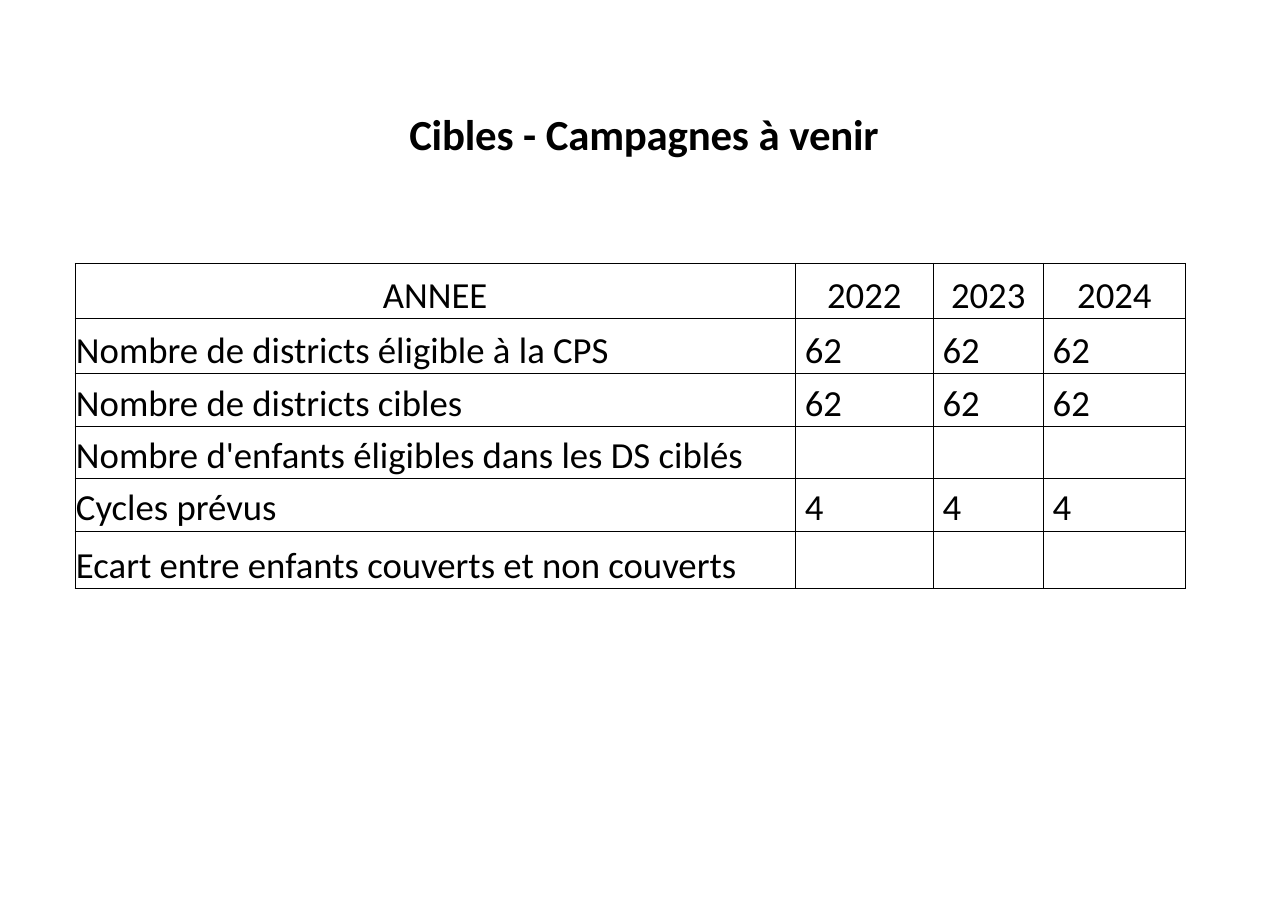
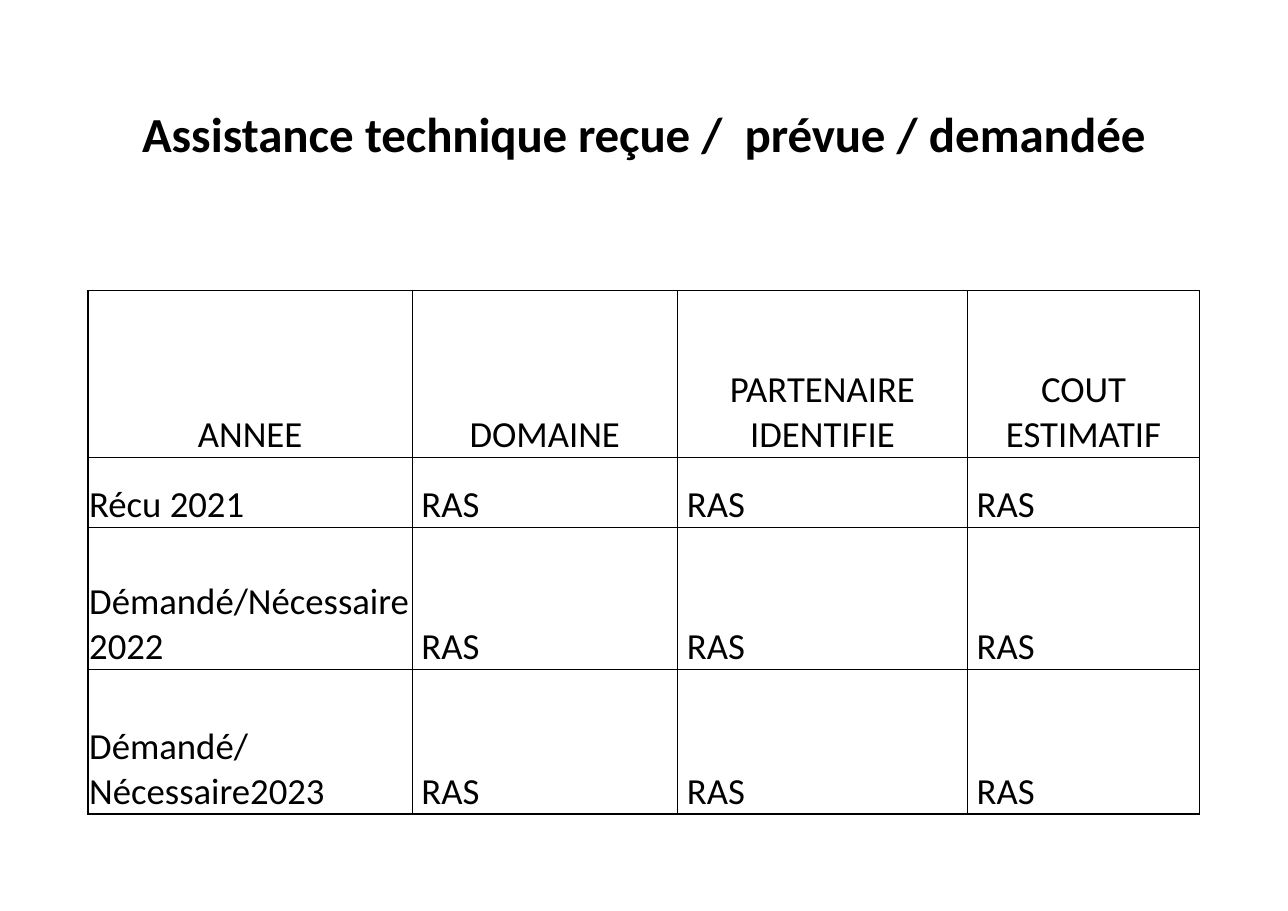
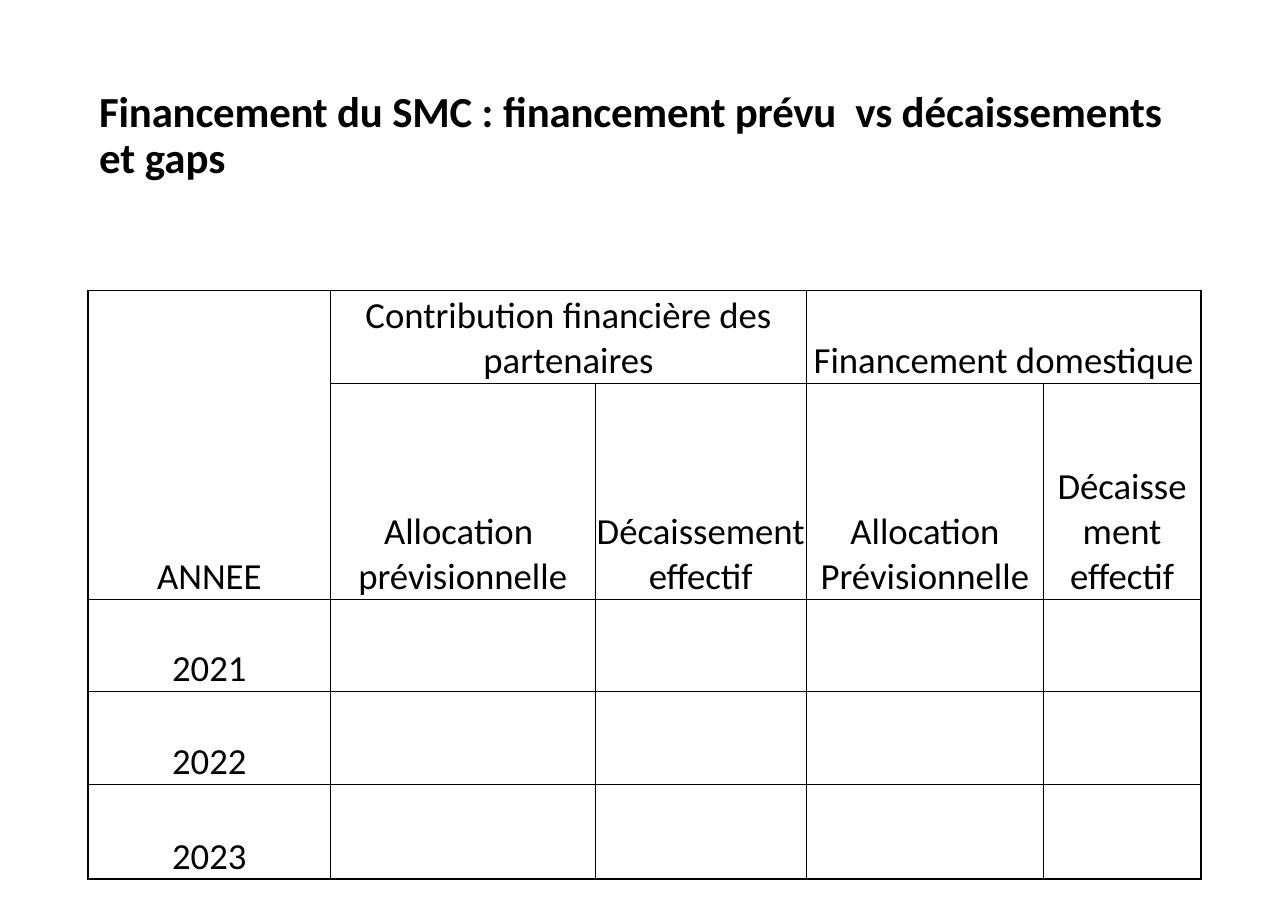
from dataclasses import dataclass

from lxml.etree import SubElement
from pptx import Presentation
from pptx.dml.color import RGBColor
from pptx.enum.text import MSO_ANCHOR as Anchor, MSO_AUTO_SIZE as AutoSize, PP_ALIGN as Align
from pptx.oxml.ns import qn
from pptx.util import Inches, Pt


@dataclass(frozen=True)
class Theme:
    font: str = "Calibri"
    ink: RGBColor = RGBColor(0, 0, 0)
    title_size: int = 28
    large_title_size: int = 32
    table_size: int = 24
    thin_line: float = 0.5
    thick_line: float = 1
    title_box: tuple = (0.8, 0.44, 10.09, 1.6)
    cell_margin: float = 0.01


THEME = Theme()


# Text
def add_run(paragraph, text, size, bold=False, spacing=0):
    run = paragraph.add_run()
    run.text = text
    run.font.name = THEME.font
    run.font.size = Pt(size)
    run.font.bold = bold
    run.font.color.rgb = THEME.ink
    if spacing:
        run.font._element.set("spc", str(round(spacing * 100)))


def add_titled_slide(presentation, runs, size=THEME.title_size, align=Align.CENTER):
    """Add a title-only slide; runs are (text, letter spacing in points)."""
    slide = presentation.slides.add_slide(presentation.slide_layouts[5])
    title = slide.shapes.title
    title.left, title.top, title.width, title.height = map(Inches, THEME.title_box)
    frame = title.text_frame
    frame.word_wrap = True
    frame.auto_size = AutoSize.NONE
    frame.vertical_anchor = Anchor.MIDDLE
    paragraph = frame.paragraphs[0]
    paragraph.alignment = align
    paragraph.line_spacing = 0.9
    for text, spacing in runs:
        add_run(paragraph, text, size, bold=True, spacing=spacing)
    return slide


# Tables
def set_borders(cell, thick_sides):
    properties = cell._tc.get_or_add_tcPr()
    for side in "LRTB":
        weight = THEME.thick_line if side in thick_sides else THEME.thin_line
        line = SubElement(properties, qn(f"a:ln{side}"), w=str(Pt(weight)))
        fill = SubElement(line, qn("a:solidFill"))
        SubElement(fill, qn("a:srgbClr"), val=str(THEME.ink))


def format_cell(cell, text, align, thick_sides):
    cell.margin_left = cell.margin_right = cell.margin_top = Inches(THEME.cell_margin)
    cell.margin_bottom = 0
    cell.vertical_anchor = Anchor.BOTTOM
    set_borders(cell, thick_sides)
    cell.fill.background()
    if text:
        paragraph = cell.text_frame.paragraphs[0]
        paragraph.alignment = align
        add_run(paragraph, text, THEME.table_size)


def add_grid(slide, left, top, widths, heights, rows, centred_rows=1, merges=(), thick_edges=""):
    """Add a ruled table; merges are (top row, left column, bottom row, right column)."""
    table = slide.shapes.add_table(
        len(heights), len(widths), Inches(left), Inches(top),
        Inches(sum(widths)), Inches(sum(heights))).table
    table.first_row = table.horz_banding = False
    for column, width in zip(table.columns, widths):
        column.width = Inches(width)
    for row, height in zip(table.rows, heights):
        row.height = Inches(height)
    for first_row, first_column, last_row, last_column in merges:
        table.cell(first_row, first_column).merge(table.cell(last_row, last_column))

    for row_index, texts in enumerate(rows):
        align = Align.CENTER if row_index < centred_rows else Align.LEFT
        for column_index, text in enumerate(texts):
            cell = table.cell(row_index, column_index)
            on_edge = {
                "L": column_index == 0,
                "R": column_index + cell.span_width == len(widths),
                "T": row_index == 0,
                "B": row_index + cell.span_height == len(heights),
            }
            thick_sides = [side for side in thick_edges if on_edge[side]]
            format_cell(cell, text, align, thick_sides)


# Slides
def add_targets_slide(presentation):
    slide = add_titled_slide(presentation, [
        ("Cibles ", -0.1), ("- ", 0), ("Campagnes ", -0.1), ("à ", 0), ("venir", -0.1)])
    add_grid(
        slide, 0.68, 2.39,
        widths=[6.54, 1.25, 1, 1.29],
        heights=[0.5, 0.5, 0.48, 0.47, 0.48, 0.52],
        rows=[
            ["ANNEE", "2022", "2023", "2024"],
            ["Nombre de districts éligible à la CPS"] + [" 62"] * 3,
            ["Nombre de districts cibles"] + [" 62"] * 3,
            ["Nombre d'enfants éligibles dans les DS ciblés"] + [""] * 3,
            ["Cycles prévus"] + [" 4"] * 3,
            ["Ecart entre enfants couverts et non couverts"] + [""] * 3,
        ])


def add_assistance_slide(presentation):
    slide = add_titled_slide(presentation, [
        ("Assistance ", 0), ("technique reçue ", -0.1), ("/  ", 0),
        ("prévue", -0.1), (" / demandée", 0)], size=THEME.large_title_size)
    periods = ["Récu 2021", "Démandé/Nécessaire 2022", "Démandé/Nécessaire2023"]
    add_grid(
        slide, 0.8, 2.64,
        widths=[2.94, 2.41, 2.63, 2.11],
        heights=[1.51, 0.64, 1.29, 1.31],
        rows=[["ANNEE", "DOMAINE", "PARTENAIRE IDENTIFIE", "COUT ESTIMATIF"]]
        + [[period] + [" RAS"] * 3 for period in periods],
        thick_edges="LB")


def add_funding_slide(presentation):
    slide = add_titled_slide(presentation, [
        ("Financement du SMC ", -0.1), (": ", 0), ("financement prévu  ", -0.1),
        ("vs ", -0.2), ("décaissements et gaps", 0)], align=Align.LEFT)
    rows = [
        ["ANNEE", "Contribution financière des partenaires", "", "Financement domestique", ""],
        ["", "Allocation  prévisionnelle", "Décaissement effectif",
         "Allocation Prévisionnelle", "Décaissement effectif"],
    ] + [[year] + [""] * 4 for year in ("2021", "2022", "2023")]
    add_grid(
        slide, 0.8, 2.64,
        widths=[2.2, 2.4, 1.92, 2.15, 1.43],
        heights=[0.84, 1.96, 0.84, 0.84, 0.86],
        rows=rows,
        centred_rows=len(rows),
        merges=[(0, 0, 1, 0), (0, 1, 0, 2), (0, 3, 0, 4)],
        thick_edges="LRTB")


def main():
    presentation = Presentation()
    presentation.slide_width = Inches(11.69)
    presentation.slide_height = Inches(8.27)
    add_targets_slide(presentation)
    add_assistance_slide(presentation)
    add_funding_slide(presentation)
    presentation.save("out.pptx")


if __name__ == "__main__":
    main()
